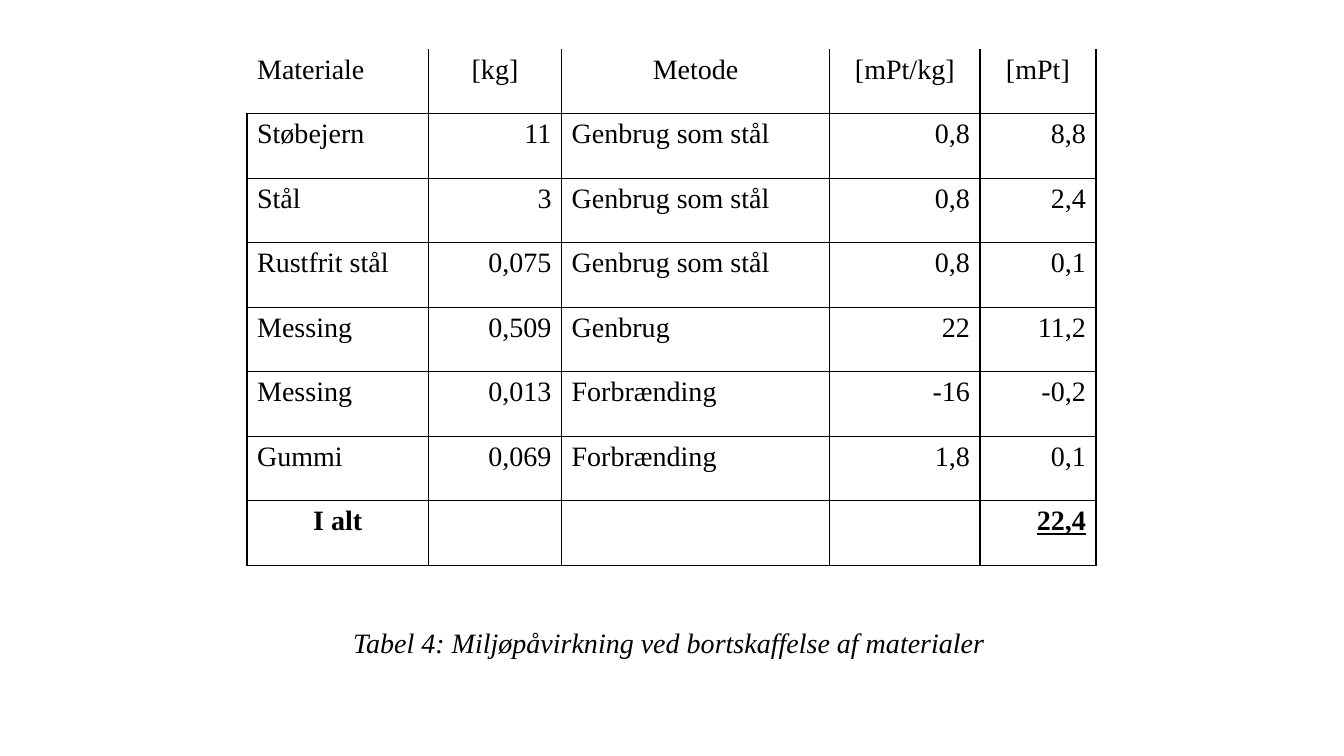
from lxml import etree
from pptx import Presentation
from pptx.dml.color import RGBColor
from pptx.enum.text import MSO_ANCHOR, MSO_AUTO_SIZE, PP_ALIGN
from pptx.oxml.ns import qn
from pptx.util import Pt

PX = 9144  # EMU per px, 100 px to the inch
BLACK = RGBColor(0, 0, 0)
FONT = "Times New Roman"
LEFT, CENTER, RIGHT = PP_ALIGN.LEFT, PP_ALIGN.CENTER, PP_ALIGN.RIGHT
MIDDLE = MSO_ANCHOR.MIDDLE
FIT_SHAPE = MSO_AUTO_SIZE.SHAPE_TO_FIT_TEXT

COLUMN_WIDTHS = [180, 132, 266, 149, 115]
COLUMN_ALIGNS = [LEFT, RIGHT, LEFT, RIGHT, RIGHT]
ROW_HEIGHT = 64
ROWS = [
    ["Materiale", "[kg]", "Metode", "[mPt/kg]", "[mPt]"],
    ["Støbejern", "11", "Genbrug som stål", "0,8", "8,8"],
    ["Stål", "3", "Genbrug som stål", "0,8", "2,4"],
    ["Rustfrit stål", "0,075", "Genbrug som stål", "0,8", "0,1"],
    ["Messing", "0,509", "Genbrug", "22", "11,2"],
    ["Messing", "0,013", "Forbrænding", "-16", "-0,2"],
    ["Gummi", "0,069", "Forbrænding", "1,8", "0,1"],
    ["I alt", "", "", "", "22,4"],
]


def write_text(text_frame, text, align=LEFT, bold=False, italic=False, underline=False):
    paragraph = text_frame.paragraphs[0]
    paragraph.alignment = align
    paragraph.font.size = Pt(20)
    if not text:
        return
    run = paragraph.add_run()
    run.text = text
    font = run.font
    font.name, font.size = FONT, Pt(20)
    font.bold, font.italic, font.underline = bold, italic, underline
    font.color.rgb = BLACK


def set_borders(cell, hidden_sides):
    properties = cell._tc.get_or_add_tcPr()
    for position, side in enumerate(["lnL", "lnR", "lnT", "lnB"]):
        line = etree.Element(qn(f"a:{side}"), w=str(Pt(1)))
        if side in hidden_sides:
            etree.SubElement(line, qn("a:noFill"))
        else:
            fill = etree.SubElement(line, qn("a:solidFill"))
            etree.SubElement(fill, qn("a:srgbClr"), val=str(BLACK))
        properties.insert(position, line)


def add_material_table(slide, left, top):
    frame = slide.shapes.add_table(
        len(ROWS), len(COLUMN_WIDTHS), left * PX, top * PX,
        sum(COLUMN_WIDTHS) * PX, len(ROWS) * ROW_HEIGHT * PX)
    table = frame.table
    table.first_row = table.horz_banding = False
    for column, width in zip(table.columns, COLUMN_WIDTHS):
        column.width = width * PX
    for row_index, values in enumerate(ROWS):
        table.rows[row_index].height = ROW_HEIGHT * PX
        is_header = row_index == 0
        is_total = row_index == len(ROWS) - 1
        for column_index, value in enumerate(values):
            is_first = column_index == 0
            cell = table.cell(row_index, column_index)
            cell.fill.background()
            align = COLUMN_ALIGNS[column_index]
            if is_header != is_first or (is_total and is_first):
                align = CENTER if is_header or is_total else align
            write_text(cell.text_frame, value, align=align, bold=is_total,
                       underline=is_total and not is_first)
            # The header row is open at the top and at its left end
            hidden_sides = ["lnT"] if is_header else []
            if is_header and is_first:
                hidden_sides.append("lnL")
            set_borders(cell, hidden_sides)


def add_caption(slide, text, left, top, width, height):
    box = slide.shapes.add_textbox(left * PX, top * PX, width * PX, height * PX)
    text_frame = box.text_frame
    text_frame.word_wrap = False
    text_frame.auto_size = FIT_SHAPE
    text_frame.vertical_anchor = MIDDLE
    write_text(text_frame, text, align=CENTER, italic=True)


def main():
    presentation = Presentation()
    presentation.slide_width = 1333 * PX
    presentation.slide_height = 750 * PX
    slide = presentation.slides.add_slide(presentation.slide_layouts[6])

    # Table of materials
    add_material_table(slide, 245, 49)

    # Caption below the table
    add_caption(slide, "Tabel 4: Miljøpåvirkning ved bortskaffelse af materialer",
                340, 616, 647, 43)

    presentation.save("out.pptx")


if __name__ == "__main__":
    main()
